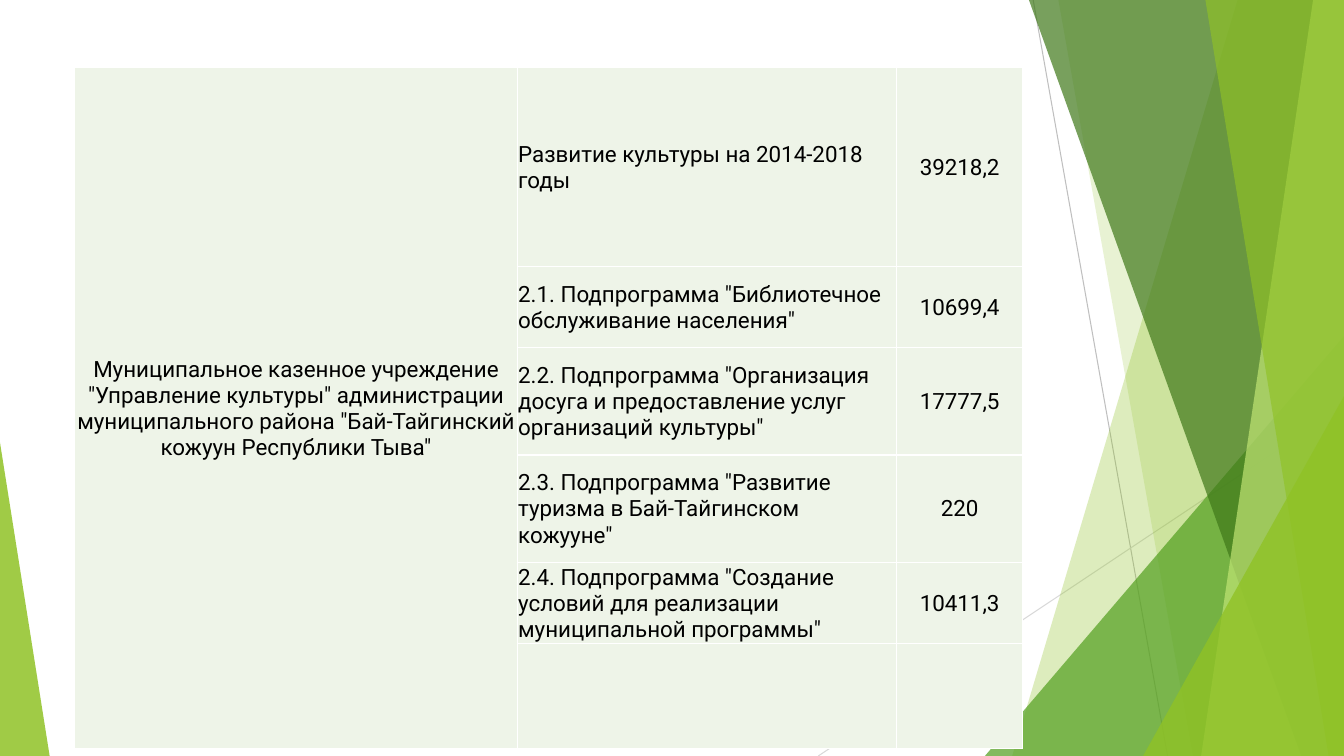
import pptx
import pptx.util
import pptx.dml.color
import pptx.enum.shapes
import pptx.enum.text
import pptx.oxml.ns
import lxml.etree

Pt = pptx.util.Pt
qn = pptx.oxml.ns.qn
sub = lxml.etree.SubElement


def paint(fill, hue, alpha=100):
    """Fill with a hex colour; alpha is the opacity in percent."""
    fill.solid()
    fill.fore_color.rgb = pptx.dml.color.RGBColor.from_string(hue)
    if alpha < 100:
        node = fill._xPr.find(qn("a:solidFill"))[0]
        sub(node, qn("a:alpha"), val=str(alpha * 1000))


def write(cell, text, size=16, font="Roboto", hue="000000", align="LEFT"):
    para = cell.text_frame.paragraphs[0]
    para.text = text
    para.alignment = getattr(pptx.enum.text.PP_ALIGN, align)
    para.font.size = Pt(size)
    for run in para.runs:
        run.font.size = Pt(size)
        run.font.name = font
        paint(run.font.fill, hue)


deck = pptx.Presentation()
deck.slide_width, deck.slide_height = Pt(960), Pt(540)
slide = deck.slides.add_slide(deck.slide_layouts[6])
shapes = slide.shapes

# Thin lines behind the facets
for x1, y1, x2, y2, hue in [
    (738, 0, 834, 540, "BFBFBF"),
    (960, 290, 584.5, 540, "D9D9D9"),
]:
    line = shapes.add_connector(
        pptx.enum.shapes.MSO_CONNECTOR.STRAIGHT, Pt(x1), Pt(y1), Pt(x2), Pt(y2)
    )
    line.line.width = Pt(0.75)
    paint(line.line.fill, hue)
    sub(line._element.spPr, qn("a:effectLst"))

# Green facets: a band has its top and foot x and runs to the right edge,
# a triangle has left, top, width, height and the place of its tip
for kind, place, hue, alpha in [
    ("band", (884, 723), "90C226", 30),
    ("band", (756, 852), "90C226", 20),
    ("tri", (703.5, 240, 256.5, 300, 1), "54A021", 72),
    ("band", (735, 929.5), "3F7819", 70),
    ("band", (938, 858), "C0E474", 70),
    ("band", (861, 949), "90C226", 65),
    ("tri", (816.5, 283, 143.5, 257, 1), "90C226", 80),
    ("tri", (0, 316, 35.5, 224, 0), "90C226", 85),
]:
    if kind == "band":
        top, foot = place
        pen = shapes.build_freeform(Pt(top), Pt(0))
        pen.add_line_segments(
            [(Pt(960), Pt(0)), (Pt(960), Pt(540)), (Pt(foot), Pt(540))], close=True
        )
        facet = pen.convert_to_shape()
    else:
        facet = shapes.add_shape(
            pptx.enum.shapes.MSO_SHAPE.ISOSCELES_TRIANGLE, *map(Pt, place[:4])
        )
        facet.adjustments[0] = place[4]
    paint(facet.fill, hue, alpha)
    facet.line.fill.background()
    facet.shadow.inherit = False

# Budget table
owner = (
    'Муниципальное казенное учреждение "Управление культуры" администрации '
    'муниципального района "Бай-Тайгинский кожуун Республики Тыва"'
)
rows = [
    (142, "Развитие культуры на 2014-2018 годы", "39218,2"),
    (57.5, '2.1. Подпрограмма "Библиотечное обслуживание населения"', "10699,4"),
    (77, '2.2. Подпрограмма "Организация досуга и предоставление услуг '
         'организаций культуры"', "17777,5"),
    (77, '2.3. Подпрограмма "Развитие туризма в Бай-Тайгинском кожууне"', "220"),
    (57.5, '2.4. Подпрограмма "Создание условий для реализации '
           'муниципальной программы"', "10411,3"),
    (75, "", ""),
]
widths = [316, 271, 90]
table = shapes.add_table(
    len(rows), len(widths), Pt(53.5), Pt(48.5),
    Pt(sum(widths)), Pt(sum(row[0] for row in rows)),
).table
table.first_row = table.horz_banding = False
for col, width in zip(table.columns, widths):
    col.width = Pt(width)

for r, (height, name, sum_) in enumerate(rows):
    table.rows[r].height = Pt(height)
    for c, text in enumerate([owner if r == 0 else "", name, sum_]):
        cell = table.cell(r, c)
        write(cell, text, align="LEFT" if c == 1 else "CENTER")
        cell.vertical_anchor = pptx.enum.text.MSO_ANCHOR.MIDDLE
        cell.margin_left = cell.margin_right = cell.margin_top = Pt(0.7)
        cell.margin_bottom = 0
        props = cell._tc.get_or_add_tcPr()
        for side in ["lnL", "lnR", "lnT", "lnB"]:
            edge = sub(props, qn("a:" + side), w=str(Pt(1)))
            sub(sub(edge, qn("a:solidFill")), qn("a:srgbClr"), val="FFFFFF")
        paint(cell.fill, "EEF4E8")
table.cell(0, 0).merge(table.cell(len(rows) - 1, 0))

deck.save("out.pptx")
